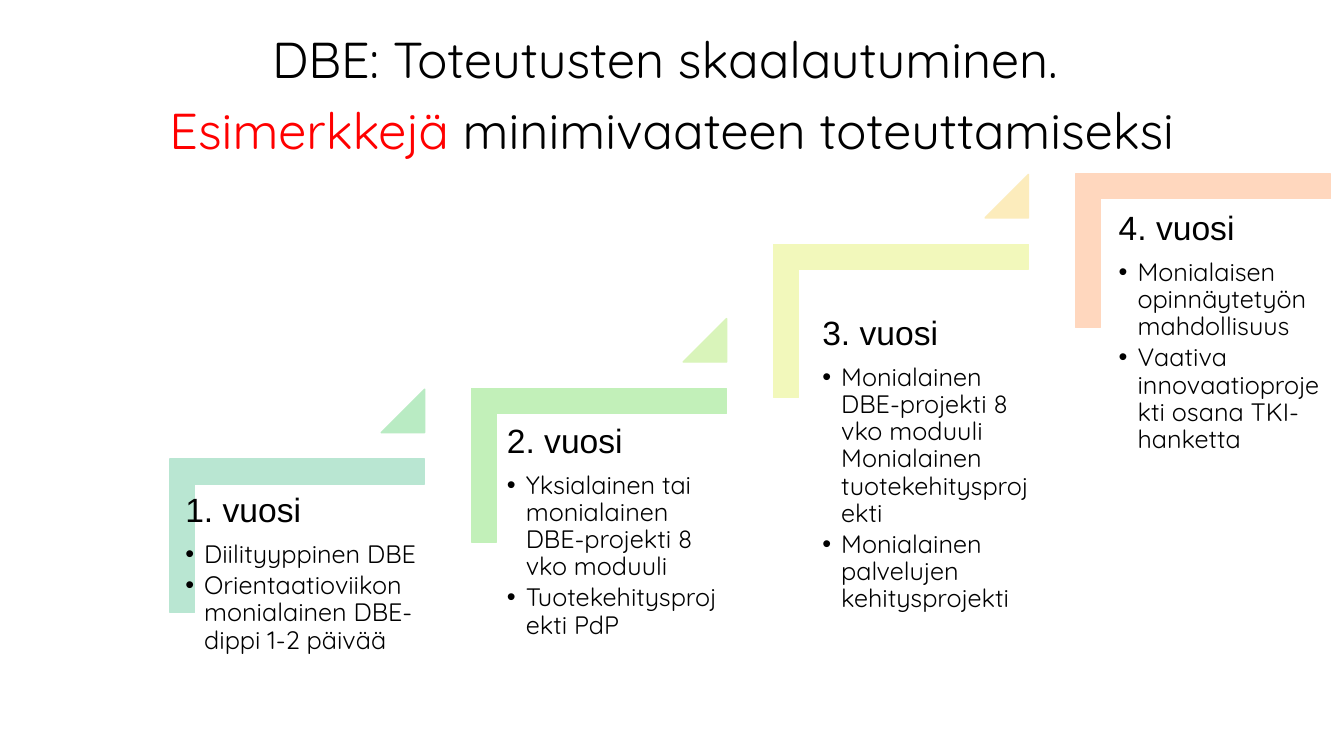
from lxml import etree
from pptx import Presentation
from pptx.dml.color import RGBColor
from pptx.enum.shapes import MSO_SHAPE
from pptx.enum.text import MSO_ANCHOR, MSO_AUTO_SIZE, PP_ALIGN
from pptx.oxml.ns import qn
from pptx.util import Pt

CORNER, TRIANGLE = MSO_SHAPE.CORNER, MSO_SHAPE.ISOSCELES_TRIANGLE
TOP, MIDDLE = MSO_ANCHOR.TOP, MSO_ANCHOR.MIDDLE
NO_FIT, CENTER = MSO_AUTO_SIZE.NONE, PP_ALIGN.CENTER

BLACK = RGBColor(0x00, 0x00, 0x00)
RED = RGBColor(0xFF, 0x00, 0x00)
MINT = RGBColor(0xB9, 0xE6, 0xD2)
SEAFOAM = RGBColor(0xB9, 0xEB, 0xC3)
GREEN = RGBColor(0xC2, 0xF0, 0xB9)
LIME = RGBColor(0xD9, 0xF4, 0xBA)
YELLOW = RGBColor(0xF2, 0xF8, 0xBB)
SAND = RGBColor(0xFC, 0xEC, 0xBC)
PEACH = RGBColor(0xFF, 0xD7, 0xBE)

STEP_LEFT, STEP_PITCH = 121.3, 215.7
STEP_W, STEP_H = 182, 109.6
ARROW, ARROW_RISE = 31, 50

# top, corner colour, arrow colour, text box (dx, dy, width, height), heading, bullets
YEARS = [
    (328, MINT, SEAFOAM, (4, 17.6, 193, 144), "1. vuosi",
     ["Diilityyppinen DBE",
      "Orientaatioviikon monialainen DBE-dippi 1-2 päivää"]),
    (277.6, GREEN, LIME, (18, 18.3, 165, 144), "2. vuosi",
     ["Yksialainen tai monialainen DBE-projekti 8 vko moduuli",
      "Tuotekehitysprojekti PdP"]),
    (174.6, YELLOW, SAND, (27.6, 44.3, 165, 252), "3. vuosi",
     ["Monialainen DBE-projekti 8 vko moduuli Monialainen tuotekehitysprojekti",
      "Monialainen palvelujen kehitysprojekti"]),
    (124.2, PEACH, None, (23.6, 19.8, 159, 144), "4. vuosi",
     ["Monialaisen opinnäytetyön mahdollisuus",
      "Vaativa innovaatioprojekti osana TKI-hanketta"]),
]


def add_text(p, text, size=18, font="Quicksand", color=BLACK, after=0, align=None, bullet=False):
    """Append a formatted run to a paragraph and set the paragraph's layout."""
    p.line_spacing = 0.9
    p.space_before = Pt(0)
    p.space_after = Pt(after)
    p.alignment = align
    if bullet:
        pPr = p._p.get_or_add_pPr()
        pPr.set("marL", str(Pt(13.5)))
        pPr.set("indent", str(Pt(-13.5)))
        etree.SubElement(pPr, qn("a:buFont")).set("typeface", "Arial")
        etree.SubElement(pPr, qn("a:buChar")).set("char", "•")
    r = p.add_run()
    r.text = text
    r.font.size, r.font.name = Pt(size), font
    r.font.color.rgb = color


def add_block(s, kind, box, color, adjustments, rotation=0):
    """Add a flat shape in one colour."""
    sp = s.shapes.add_shape(kind, *map(Pt, box))
    sp.shadow.inherit = False
    sp.rotation = rotation
    sp.fill.solid()
    sp.fill.fore_color.rgb = color
    sp.line.color.rgb = color
    sp.line.width = Pt(1)
    for i, value in enumerate(adjustments):
        sp.adjustments[i] = value


def add_title(s, box):
    """Place the two-line title in its box."""
    sp = s.shapes.title
    sp.left, sp.top, sp.width, sp.height = map(Pt, box)
    tf = sp.text_frame
    tf.word_wrap, tf.auto_size, tf.vertical_anchor = True, NO_FIT, MIDDLE
    style = {"size": 36, "after": 12, "align": CENTER}
    add_text(tf.paragraphs[0], "DBE: Toteutusten skaalautuminen. ", **style)
    p = tf.add_paragraph()
    add_text(p, "Esimerkkejä ", color=RED, **style)
    add_text(p, "minimivaateen toteuttamiseksi", **style)


def add_year_text(s, box, heading, bullets):
    """Write a year's heading and bullets in a text box."""
    tf = s.shapes.add_textbox(*map(Pt, box)).text_frame
    tf.word_wrap, tf.vertical_anchor = True, TOP
    tf.margin_left = tf.margin_right = tf.margin_top = tf.margin_bottom = Pt(7.2)
    add_text(tf.paragraphs[0], heading, size=24, font="Arial", after=8.4)
    for text in bullets:
        add_text(tf.add_paragraph(), text, after=2.7, bullet=True)


def add_year(s, box, corner_color, arrow_color, text_box, heading, bullets):
    """Draw one step of the staircase: corner, text and arrow to the next."""
    x, y, w, h = box
    inset = (w - h) / 2
    add_block(s, CORNER, (x + inset, y - inset, h, w), corner_color, [0.161, 0.161], 90)
    dx, dy, text_w, text_h = text_box
    add_year_text(s, (x + dx, y + dy, text_w, text_h), heading, bullets)
    if arrow_color is not None:
        arrow_box = (x + w - ARROW, y - ARROW_RISE, ARROW, ARROW)
        add_block(s, TRIANGLE, arrow_box, arrow_color, [1])


def main():
    """Build and save the slide."""
    prs = Presentation()
    prs.slide_width, prs.slide_height = Pt(960), Pt(540)
    s = prs.slides.add_slide(prs.slide_layouts[5])
    add_title(s, (8.6, -29.5, 942.5, 198.7))
    for i, (top, *parts) in enumerate(YEARS):
        add_year(s, (STEP_LEFT + i * STEP_PITCH, top, STEP_W, STEP_H), *parts)
    prs.save("out.pptx")


if __name__ == "__main__":
    main()
